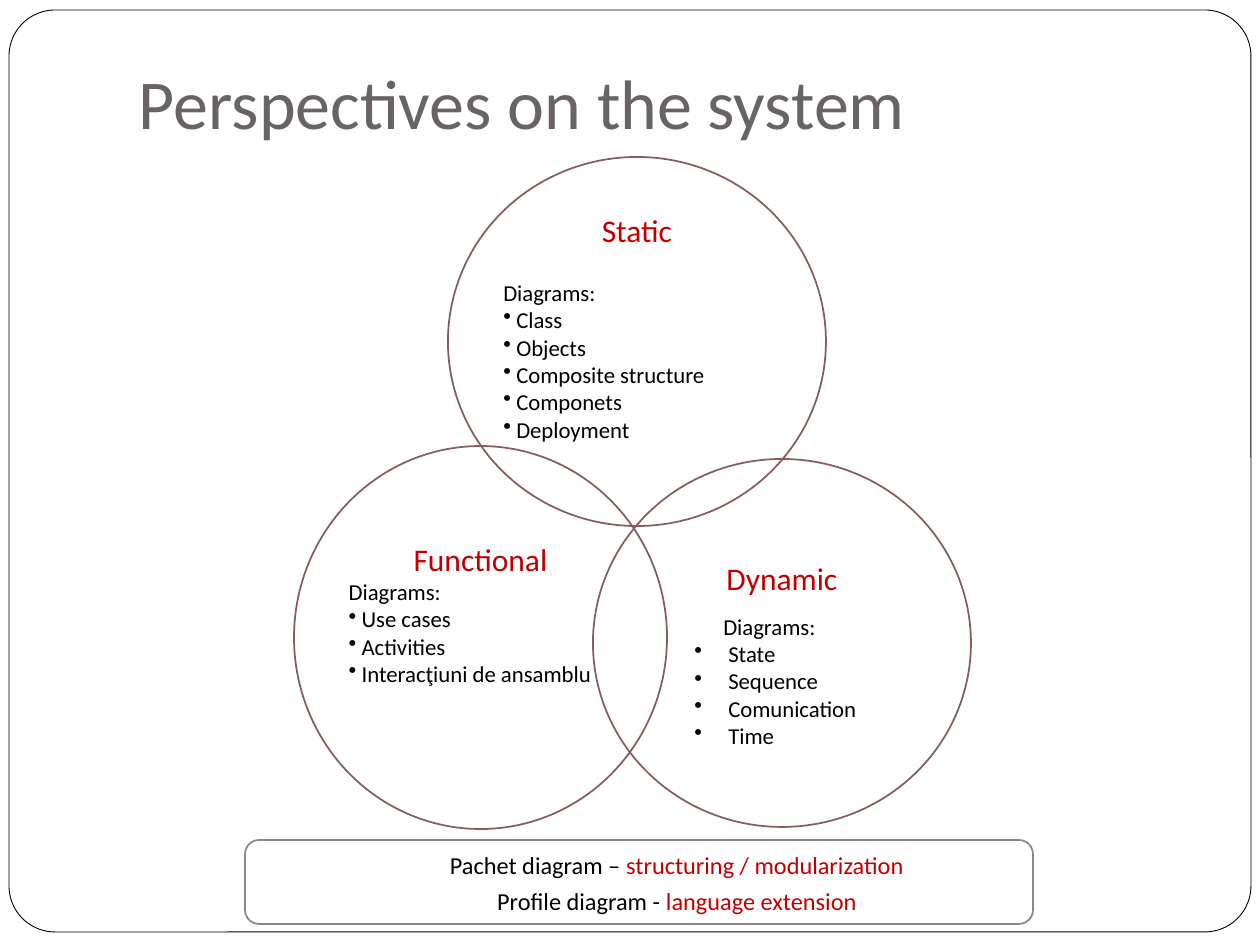
from pptx import Presentation
from pptx.dml.color import RGBColor
from pptx.enum.shapes import MSO_SHAPE
from pptx.enum.text import MSO_ANCHOR, MSO_AUTO_SIZE, PP_ALIGN
from pptx.oxml.xmlchemy import OxmlElement
from pptx.util import Pt

PX = 914400 / 126
FONT = "Calibri"
BLACK = RGBColor(0, 0, 0)
RED = RGBColor(0xC0, 0, 0)
GREY = RGBColor(0x69, 0x64, 0x64)
ROSE = RGBColor(0x85, 0x5D, 0x5D)
TAUPE = RGBColor(0x91, 0x84, 0x85)
ROUND, OVAL = MSO_SHAPE.ROUNDED_RECTANGLE, MSO_SHAPE.OVAL
TOP, BOTTOM = MSO_ANCHOR.TOP, MSO_ANCHOR.BOTTOM
LEFT, CENTER = PP_ALIGN.LEFT, PP_ALIGN.CENTER
FIXED = MSO_AUTO_SIZE.NONE


def emu(px):
    return round(px * PX)


def place(shape, box):
    shape.left, shape.top, shape.width, shape.height = map(emu, box)


def setup(shape, anchor, insets):
    """Return the cleared text frame, with insets as left, top, right, bottom."""
    frame = shape.text_frame
    frame.word_wrap = True
    frame.auto_size = FIXED
    frame.vertical_anchor = anchor
    (frame.margin_left, frame.margin_top,
     frame.margin_right, frame.margin_bottom) = map(emu, insets)
    return frame


def add_run(para, text, size, color):
    run = para.add_run()
    run.text = text
    font = run.font
    font.name, font.size = FONT, Pt(size)
    font.color.rgb = color


def add_para(frame, first=False, align=LEFT, before=0):
    para = frame.paragraphs[0] if first else frame.add_paragraph()
    para.alignment = align
    para.space_before = Pt(before)
    return para


def indent(para, margin, hang=0, bullet=None):
    props = para._p.get_or_add_pPr()
    props.set("marL", str(emu(margin)))
    props.set("indent", str(-emu(hang)))
    mark = OxmlElement("a:buChar" if bullet else "a:buNone")
    if bullet:
        mark.set("char", bullet)
    props.append(mark)


def outline(shape, color, width):
    shape.fill.background()
    shape.line.color.rgb = color
    shape.line.width = Pt(width)


def add_shape(slide, kind, box, color, width):
    shape = slide.shapes.add_shape(kind, *map(emu, box))
    shape.shadow.inherit = False
    outline(shape, color, width)
    return shape


def add_title(slide, text):
    title = slide.shapes.title
    place(title, (126, 0, 1071, 157))
    frame = setup(title, BOTTOM, (13, 6, 13, 13))
    add_run(add_para(frame, True), text, 40, GREY)


def add_body(slide, rows):
    body = slide.placeholders[1]
    place(body, (245, 840, 788, 84))
    geom = OxmlElement("a:prstGeom")
    geom.set("prst", "roundRect")
    geom.append(OxmlElement("a:avLst"))
    body._element.spPr.append(geom)
    outline(body, TAUPE, 1)
    frame = setup(body, TOP, (13, 6, 13, 6))
    for i, (label, use) in enumerate(rows):
        para = add_para(frame, i == 0, CENTER, 3.7)
        indent(para, 76)
        add_run(para, label, 13.9, BLACK)
        add_run(para, use, 13.9, RED)


def add_circle(slide, box, name, items, top, gap, left=0, text=13, hang=13):
    """Circle with a name, then a bullet list; left and text are list margins."""
    circle = add_shape(slide, OVAL, box, ROSE, 1)
    frame = setup(circle, TOP, (0, top, 0, 0))
    add_run(add_para(frame, True, CENTER), name, 18, RED)
    head = add_para(frame, before=gap)
    indent(head, left)
    add_run(head, "Diagrams:", 13, BLACK)
    for item in items:
        para = add_para(frame)
        indent(para, text, hang, "•")
        add_run(para, item, 13, BLACK)


def main():
    deck = Presentation()
    deck.slide_width, deck.slide_height = emu(1260), emu(945)
    slide = deck.slides.add_slide(deck.slide_layouts[1])
    frame = add_shape(slide, ROUND, (9, 10, 1242, 922), BLACK, 0.5)
    frame.adjustments[0] = 0.05
    add_title(slide, "Perspectives on the system")
    add_body(slide, [
        ("Pachet diagram – ", "structuring / modularization"),
        ("Profile diagram - ", "language extension"),
    ])
    add_circle(slide, (448, 157, 378, 369), "Static",
               ["Class", "Objects", "Composite structure", "Componets",
                "Deployment"], 0, 17)
    add_circle(slide, (294, 446, 373, 383), "Functional",
               ["Use cases", "Activities", "Interacţiuni de ansamblu"], 38, 0)
    add_circle(slide, (593, 459, 378, 368), "Dynamic",
               ["State", "Sequence", "Comunication", "Time"],
               46, 9, left=75, text=80, hang=34)
    deck.save("out.pptx")


if __name__ == "__main__":
    main()
